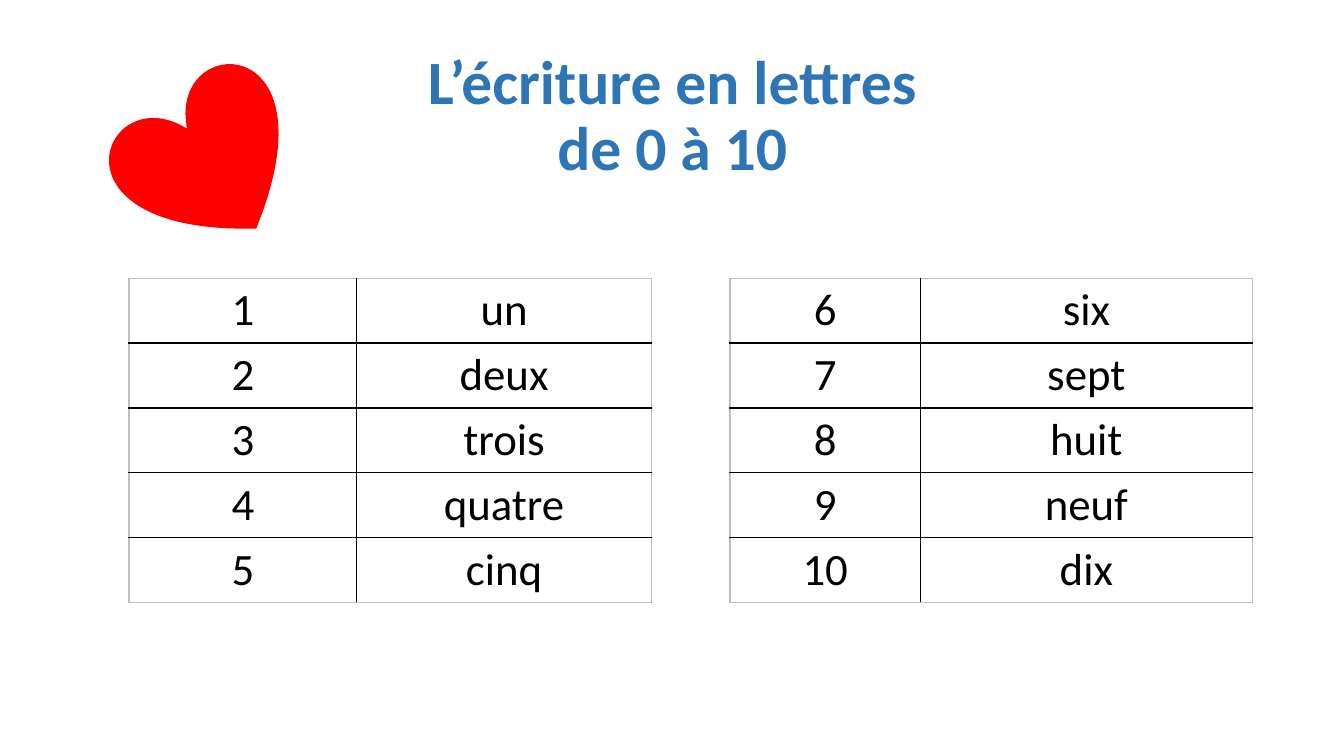
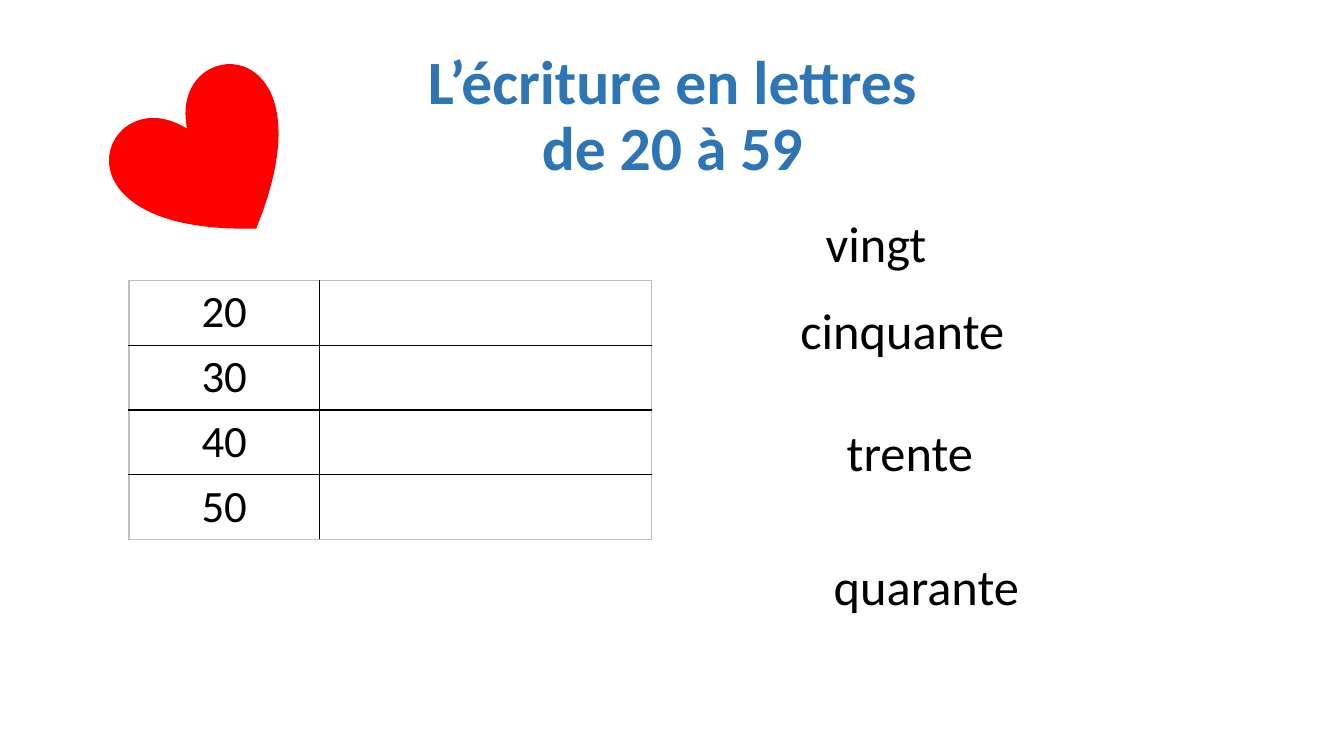
from lxml.etree import SubElement
from pptx import Presentation
from pptx.dml.color import RGBColor
from pptx.enum.shapes import MSO_SHAPE as Shape
from pptx.enum.text import MSO_ANCHOR as Anchor, MSO_AUTO_SIZE as AutoSize, PP_ALIGN as Align
from pptx.oxml.ns import qn
from pptx.util import Pt

PX = 9144
BLACK = RGBColor(0, 0, 0)
GREY = RGBColor(0xBF, 0xBF, 0xBF)
BLUE = RGBColor(0x2E, 0x75, 0xB6)
RED = RGBColor(0xFF, 0, 0)

TITLE_BOX = (92, 44, 1150, 145)
HEART_BOX = (121, 83, 176, 157)
ROW_HEIGHT = 64
TITLE_FONT = {"name": "Calibri", "size": Pt(44), "bold": True}
CELL_FONT = {"name": "Calibri", "size": Pt(32)}
WORD_FONT = {"name": "Calibri", "size": Pt(36)}

SLIDES = [
    {
        "title": "L’écriture en lettres\nde 0 à 10",
        "tables": [
            (128, 276, (226, 292), [("1", "un"), ("2", "deux"), ("3", "trois"), ("4", "quatre"), ("5", "cinq")]),
            (724, 276, (189, 329), [("6", "six"), ("7", "sept"), ("8", "huit"), ("9", "neuf"), ("10", "dix")]),
        ],
        "words": [],
    },
    {
        "title": "L’écriture en lettres\nde 20 à 59",
        "tables": [(128, 278, (189, 329), [("20", ""), ("30", ""), ("40", ""), ("50", "")])],
        "words": [
            ("vingt", 809, 205, 121),
            ("trente", 830, 413, 146),
            ("quarante", 817, 546, 205),
            ("cinquante", 784, 292, 224),
        ],
    },
]


def write(text_frame, text, font_values, color, align):
    text_frame.text = text
    for paragraph in text_frame.paragraphs:
        paragraph.alignment = align
        for name, value in font_values.items():
            setattr(paragraph.font, name, value)
        paragraph.font.color.rgb = color


def set_borders(cell, outer_sides):
    properties = cell._tc.get_or_add_tcPr()
    for side, is_outer in outer_sides.items():
        line = SubElement(properties, qn(f"a:{side}"), w=str(Pt(1)))
        fill = SubElement(line, qn("a:solidFill"))
        SubElement(fill, qn("a:srgbClr"), val=str(GREY if is_outer else BLACK))


presentation = Presentation()
presentation.slide_width = 1333 * PX
presentation.slide_height = 750 * PX

for content in SLIDES:
    slide = presentation.slides.add_slide(presentation.slide_layouts[5])
    title = slide.shapes.title
    for name, value in zip(("left", "top", "width", "height"), TITLE_BOX):
        setattr(title, name, value * PX)
    write(title.text_frame, content["title"], TITLE_FONT, BLUE, Align.CENTER)
    title.text_frame.vertical_anchor = Anchor.MIDDLE
    for paragraph in title.text_frame.paragraphs:
        paragraph.line_spacing = 0.9

    heart = slide.shapes.add_shape(Shape.HEART, *[value * PX for value in HEART_BOX])
    heart.rotation = 325.3
    heart.shadow.inherit = False
    heart.fill.solid()
    heart.fill.fore_color.rgb = RED
    heart.line.color.rgb = RED
    heart.line.width = Pt(1)

    for left, top, widths, rows in content["tables"]:
        frame = slide.shapes.add_table(
            len(rows), len(widths), left * PX, top * PX, sum(widths) * PX, len(rows) * ROW_HEIGHT * PX
        )
        table = frame.table
        table.first_row = table.horz_banding = False
        for column, width in zip(table.columns, widths):
            column.width = width * PX
        for row_index, row in enumerate(rows):
            for column_index, text in enumerate(row):
                cell = table.cell(row_index, column_index)
                write(cell.text_frame, text, CELL_FONT, BLACK, Align.CENTER)
                set_borders(cell, {
                    "lnL": column_index == 0,
                    "lnR": column_index == len(widths) - 1,
                    "lnT": row_index == 0,
                    "lnB": row_index == len(rows) - 1,
                })
                cell.fill.background()

    for word, left, top, width in content["words"]:
        box = slide.shapes.add_textbox(left * PX, top * PX, width * PX, 71 * PX)
        box.text_frame.word_wrap = False
        box.text_frame.auto_size = AutoSize.SHAPE_TO_FIT_TEXT
        write(box.text_frame, word, WORD_FONT, BLACK, Align.LEFT)

presentation.save("out.pptx")
